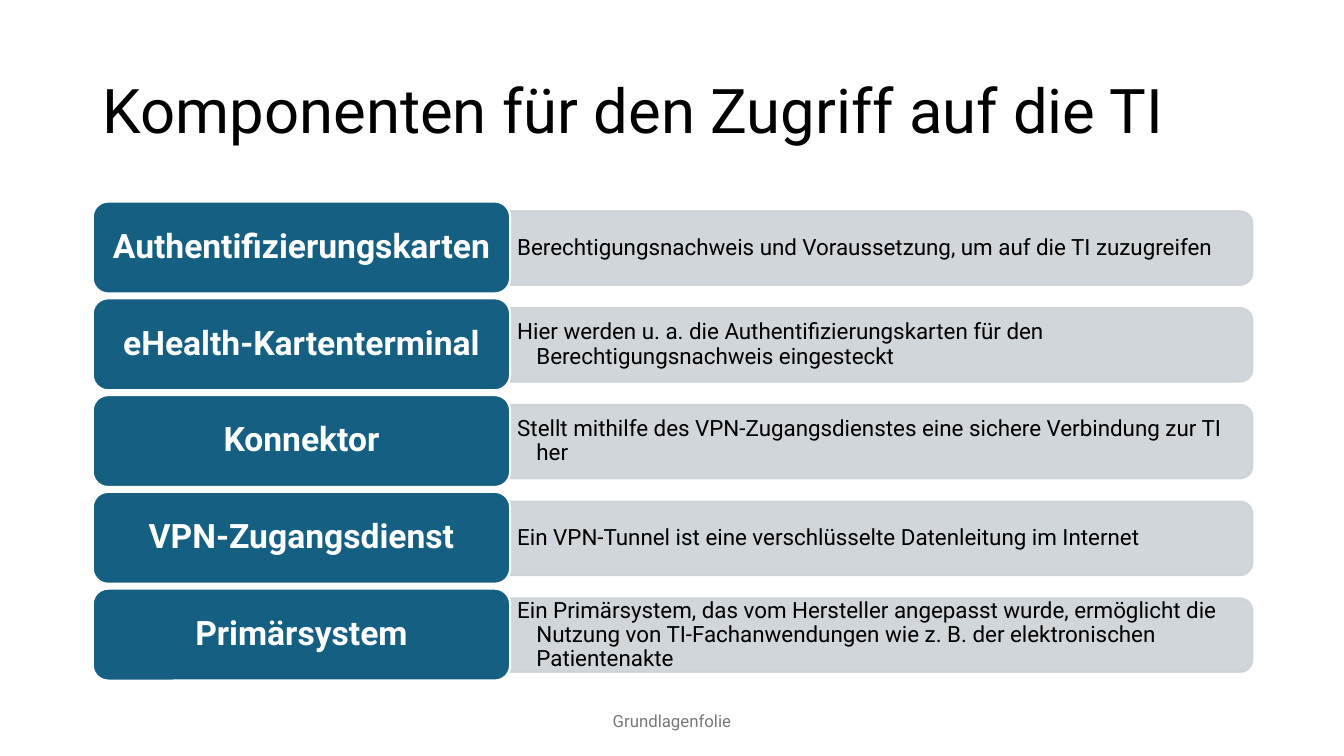
from dataclasses import dataclass
from typing import NamedTuple

from pptx import Presentation
from pptx import util as u
from pptx.dml.color import RGBColor
from pptx.enum import shapes, text
from pptx.oxml import parse_xml
from pptx.oxml.ns import nsdecls


@dataclass(frozen=True)
class Theme:
    font: str = "Roboto"
    black: str = "000000"
    white: str = "FFFFFF"
    label: str = "156082"
    band: str = "CCD2D8"
    footer: str = "797979"
    band_opacity: int = 90
    title_size: int = 44
    label_size: int = 24
    body_size: int = 16
    footer_size: int = 12
    line_width: float = 1.5
    line_spacing: float = 0.9


class Component(NamedTuple):
    name: str
    description: str


class Box(NamedTuple):
    left: int
    top: int
    width: int
    height: int

    def turned(self) -> "Box":
        """Swap width and height around the same centre."""
        shift = (self.width - self.height) // 2
        return Box(self.left + shift, self.top - shift, self.height, self.width)


THEME = Theme()
SLIDE_WIDTH, SLIDE_HEIGHT = u.Inches(13.33), u.Inches(7.5)
GRID_LEFT, GRID_TOP = u.Inches(0.92), u.Inches(2)
GRID_WIDTH, ROW_HEIGHT = u.Inches(11.5), u.Inches(0.96)
LABEL_COLUMN = 0.36
HANGING_INDENT = u.Inches(0.19)

COMPONENTS = [
    Component("Authentifizierungskarten",
              "Berechtigungsnachweis und Voraussetzung, um auf die TI zuzugreifen"),
    Component("eHealth-Kartenterminal",
              "Hier werden u. a. die Authentifizierungskarten für den "
              "Berechtigungsnachweis eingesteckt"),
    Component("Konnektor",
              "Stellt mithilfe des VPN-Zugangsdienstes eine sichere Verbindung zur TI her"),
    Component("VPN-Zugangsdienst",
              "Ein VPN-Tunnel ist eine verschlüsselte Datenleitung im Internet"),
    Component("Primärsystem",
              "Ein Primärsystem, das vom Hersteller angepasst wurde, ermöglicht die "
              "Nutzung von TI-Fachanwendungen wie z. B. der elektronischen Patientenakte"),
]


def grid_box(column: float, row: float, columns: float, rows: float) -> Box:
    """Columns are shares of the grid width, rows are multiples of the row height."""
    return Box(int(GRID_LEFT + column * GRID_WIDTH), int(GRID_TOP + row * ROW_HEIGHT),
               int(columns * GRID_WIDTH), int(rows * ROW_HEIGHT))


def write(shape, wording: str, size: int, color: str, bold: bool = False,
          align=text.PP_ALIGN.LEFT, spacing: float = THEME.line_spacing):
    frame = shape.text_frame
    frame.text = wording
    frame.word_wrap = True
    frame.auto_size = text.MSO_AUTO_SIZE.NONE
    frame.vertical_anchor = text.MSO_ANCHOR.MIDDLE
    paragraph = frame.paragraphs[0]
    paragraph.alignment = align
    paragraph.line_spacing = spacing
    font = paragraph.runs[0].font
    font.name, font.size, font.bold = THEME.font, u.Pt(size), bold
    font.color.rgb = RGBColor.from_string(color)
    return paragraph


def add_panel(slide, kind, box: Box, fill: str, line: str):
    shape = slide.shapes.add_shape(kind, *box)
    shape.shadow.inherit = False
    shape.fill.solid()
    shape.fill.fore_color.rgb = RGBColor.from_string(fill)
    shape.line.color.rgb = RGBColor.from_string(line)
    shape.line.width = u.Pt(THEME.line_width)
    return shape


def set_opacity(shape, percent: int) -> None:
    """Apply the opacity to both fill and line."""
    for color in shape._element.spPr.xpath(".//a:srgbClr"):
        color.append(parse_xml(f'<a:alpha {nsdecls("a")} val="{percent * 1000}"/>'))


def add_band(slide, row: int) -> None:
    box = grid_box(LABEL_COLUMN, row + 0.1, 1 - LABEL_COLUMN, 0.76)
    band = add_panel(slide, shapes.MSO_SHAPE.ROUND_2_SAME_RECTANGLE,
                     box.turned(), THEME.band, THEME.band)
    band.rotation = 90
    set_opacity(band, THEME.band_opacity)


def add_description(slide, row: int, wording: str) -> None:
    box = grid_box(LABEL_COLUMN, row + 0.135, 0.637, 0.69)
    shape = slide.shapes.add_textbox(*box)
    frame = shape.text_frame
    frame.margin_left = frame.margin_right = u.Inches(0.07)
    frame.margin_top = frame.margin_bottom = u.Inches(0.03)
    paragraph = write(shape, wording, THEME.body_size, THEME.black)
    properties = paragraph._p.get_or_add_pPr()
    properties.set("marL", str(HANGING_INDENT))
    properties.set("indent", str(-HANGING_INDENT))


def add_label(slide, row: int, wording: str) -> None:
    label = add_panel(slide, shapes.MSO_SHAPE.ROUNDED_RECTANGLE,
                      grid_box(0, row, LABEL_COLUMN, 0.95), THEME.label, THEME.white)
    write(label, wording, THEME.label_size, THEME.white, bold=True,
          align=text.PP_ALIGN.CENTER)


def add_title(slide, wording: str) -> None:
    title = slide.shapes.title
    title.left, title.top, title.width, title.height = (
        GRID_LEFT, u.Inches(0.4), GRID_WIDTH, u.Inches(1.45))
    write(title, wording, THEME.title_size, THEME.black)


def add_footer(slide, wording: str) -> None:
    width = u.Inches(4.5)
    footer = slide.shapes.add_textbox((SLIDE_WIDTH - width) // 2, u.Inches(6.95),
                                      width, u.Inches(0.4))
    write(footer, wording, THEME.footer_size, THEME.footer,
          align=text.PP_ALIGN.CENTER, spacing=1.0)


def main() -> None:
    presentation = Presentation()
    presentation.slide_width, presentation.slide_height = SLIDE_WIDTH, SLIDE_HEIGHT
    slide = presentation.slides.add_slide(
        presentation.slide_layouts.get_by_name("Title Only"))
    add_title(slide, "Komponenten für den Zugriff auf die TI")
    for row, component in enumerate(COMPONENTS):
        add_band(slide, row)
        add_description(slide, row, component.description)
        add_label(slide, row, component.name)
    add_footer(slide, "Grundlagenfolie")
    presentation.save("out.pptx")


if __name__ == "__main__":
    main()
